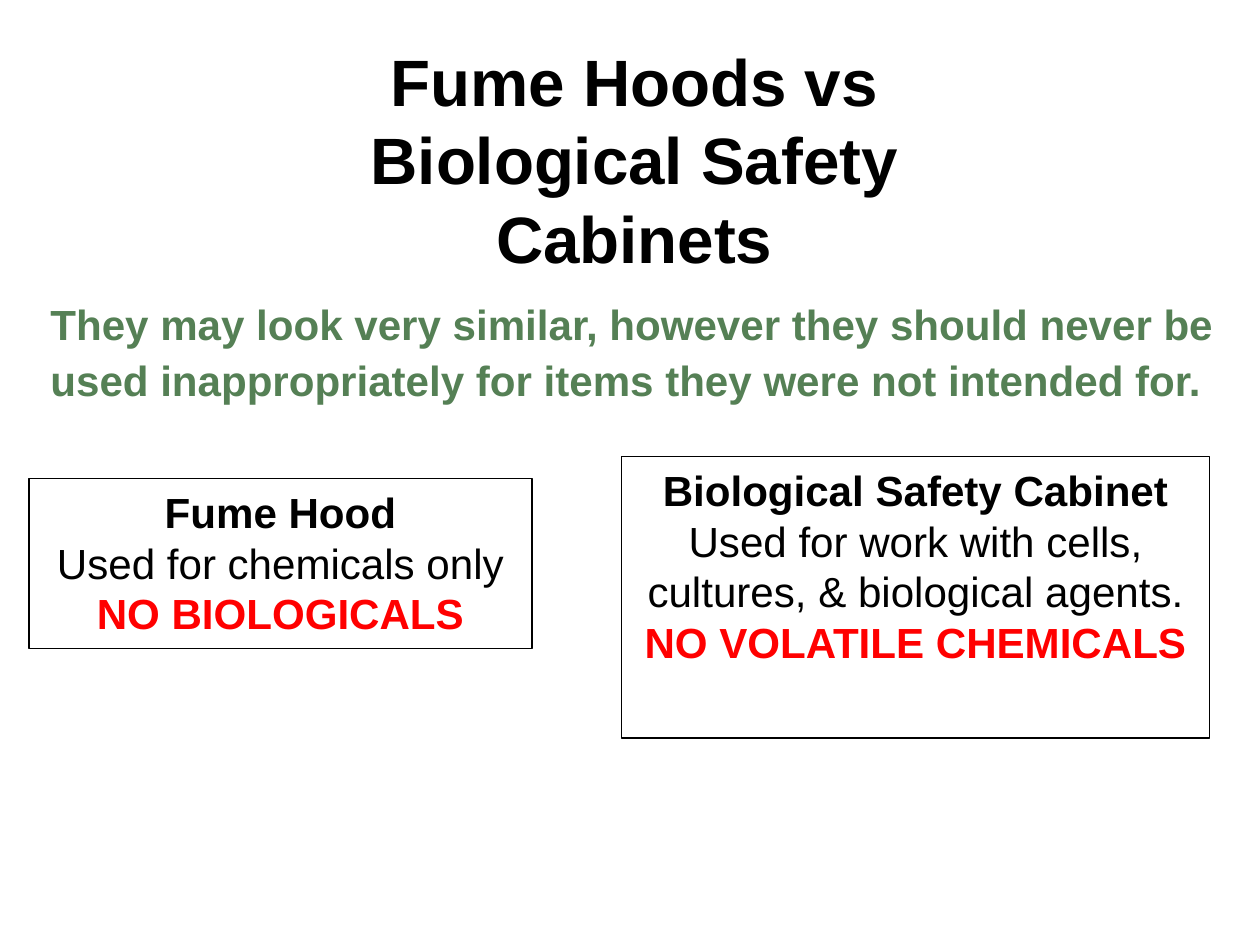
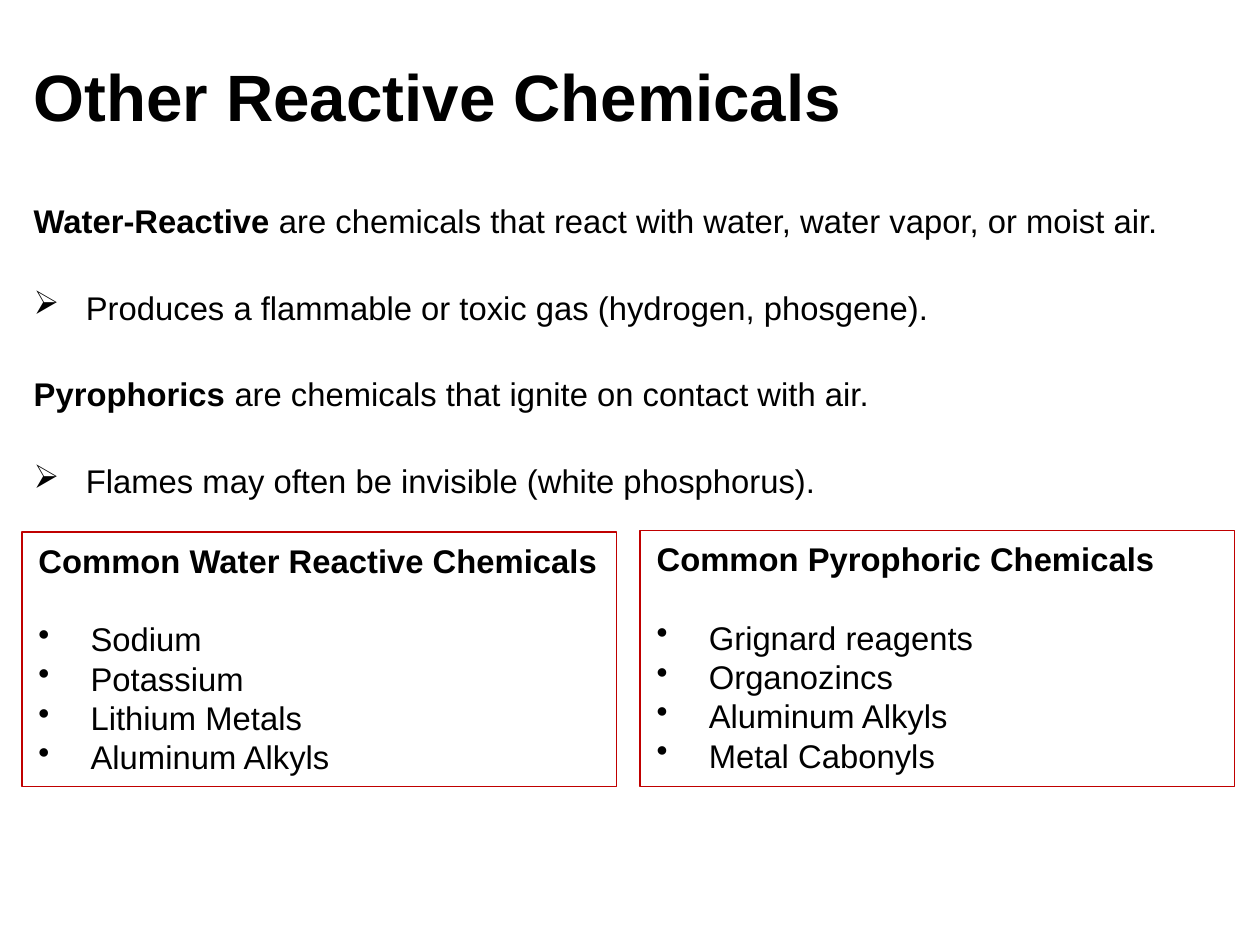
"""Builds two laboratory safety slides on fume hoods and reactive chemicals."""
import pptx
import pptx.dml.color
import pptx.enum.shapes
import pptx.enum.text
import pptx.oxml.ns
import pptx.util
from lxml import etree

PX = 9144
ALIGN = pptx.enum.text.PP_ALIGN
ANCHOR = pptx.enum.text.MSO_ANCHOR


def px(length):
    return pptx.util.Emu(length * PX)


def color(code):
    return pptx.dml.color.RGBColor.from_string(code)


class Deck:
    FONT = "Arial"
    BLACK, RED, GREEN, CRIMSON = "000000", "FF0000", "558055", "C00000"
    TITLE, LARGE, SMALL = 28, 18, 14
    SINGLE, LOOSE = 1.2, 1.32
    INDENT = 31

    def __init__(self, width, height):
        self.show = pptx.Presentation()
        self.show.slide_width, self.show.slide_height = px(width), px(height)
        self.slide = None

    def new_slide(self):
        self.slide = self.show.slides.add_slide(self.show.slide_layouts[6])

    def prepare(self, frame, insets, anchor=ANCHOR.TOP):
        frame.word_wrap = True
        frame.vertical_anchor = anchor
        frame.margin_left, frame.margin_top, frame.margin_right, frame.margin_bottom = map(px, insets)

    def add_lines(self, frame, lines, size, spacing=SINGLE, align=ALIGN.LEFT, gaps=()):
        pitch = pptx.util.Pt(round(size * spacing, 1))
        for index, (bullet, runs) in enumerate(lines):
            paragraph = frame.paragraphs[0] if index == 0 else frame.add_paragraph()
            paragraph.alignment = align
            paragraph.line_spacing = pitch
            paragraph.space_before = pitch if index in gaps else pptx.util.Pt(0)
            if bullet:
                props = paragraph._p.get_or_add_pPr()
                props.set("marL", str(px(self.INDENT)))
                props.set("indent", str(-px(self.INDENT)))
                mark = etree.SubElement(props, pptx.oxml.ns.qn("a:buChar"))
                mark.set("char", bullet)
            for text, bold, shade in runs:
                run = paragraph.add_run()
                run.text = text
                run.font.name = self.FONT
                run.font.size = pptx.util.Pt(size)
                run.font.bold = bold
                run.font.color.rgb = color(shade)

    def title(self, place, text, align=ALIGN.LEFT):
        frame = self.slide.shapes.add_textbox(*map(px, place)).text_frame
        self.prepare(frame, (0, 0, 0, 5), ANCHOR.BOTTOM)
        self.add_lines(frame, [("", [(text, True, self.BLACK)])], self.TITLE, align=align)

    def body(self, place, lines, size, gaps=()):
        frame = self.slide.shapes.add_textbox(*map(px, place)).text_frame
        self.prepare(frame, (0, 5, 0, 5))
        self.add_lines(frame, lines, size, self.LOOSE, gaps=gaps)

    def panel(self, place, lines, size, border, align=ALIGN.LEFT, gaps=()):
        rectangle = pptx.enum.shapes.MSO_SHAPE.RECTANGLE
        shape = self.slide.shapes.add_shape(rectangle, *map(px, place))
        shape.shadow.inherit = False
        shape.fill.background()
        shape.line.color.rgb = color(border)
        shape.line.width = pptx.util.Pt(0.75)
        self.prepare(shape.text_frame, (10, 5, 10, 5))
        self.add_lines(shape.text_frame, lines, size, align=align, gaps=gaps)

    def usage_panel(self, place, heading, uses, warning):
        lines = [("", [(heading, True, self.BLACK)])]
        lines += [("", [(use, False, self.BLACK)]) for use in uses]
        lines.append(("", [(warning, True, self.RED)]))
        self.panel(place, lines, self.LARGE, self.BLACK, ALIGN.CENTER)

    def examples_panel(self, place, heading, examples):
        lines = [("", [(heading, True, self.BLACK)])]
        lines += [("•", [(example, False, self.BLACK)]) for example in examples]
        self.panel(place, lines, self.SMALL, self.CRIMSON, gaps=(1,))

    def definitions(self, place, entries):
        lines = []
        for term, meaning, effect in entries:
            lines.append(("", [(term, True, self.BLACK), (meaning, False, self.BLACK)]))
            lines.append(("➢", [(effect, False, self.BLACK)]))
        self.body(place, lines, self.SMALL, range(1, len(lines)))


def main():
    deck = Deck(748, 561)

    deck.new_slide()
    deck.title((156, 27, 441, 142), "Fume Hoods vs Biological Safety Cabinets", ALIGN.CENTER)
    advice = ("They may look very similar, however they should never be used "
              "inappropriately for items they were not intended for.")
    deck.body((30, 169, 693, 89), [("", [(advice, True, deck.GREEN)])], deck.LARGE)
    deck.usage_panel((17, 284, 299, 101), "Fume Hood",
                     ["Used for chemicals only"], "NO BIOLOGICALS")
    deck.usage_panel((369, 271, 349, 167), "Biological Safety Cabinet",
                     ["Used for work with cells,", "cultures, & biological agents."],
                     "NO VOLATILE CHEMICALS")

    deck.new_slide()
    deck.title((20, 32, 629, 53), "Other Reactive Chemicals")
    deck.definitions((20, 112, 705, 200), [
        ("Water-Reactive ", "are chemicals that react with water, water vapor, or moist air.",
         "Produces a flammable or toxic gas (hydrogen, phosgene)."),
        ("Pyrophorics ", "are chemicals that ignite on contact with air.",
         "Flames may often be invisible (white phosphorus)."),
    ])
    deck.examples_panel((13, 316, 353, 151), "Common Water Reactive Chemicals",
                        ["Sodium", "Potassium", "Lithium Metals", "Aluminum Alkyls"])
    deck.examples_panel((380, 315, 353, 152), "Common Pyrophoric Chemicals",
                        ["Grignard reagents", "Organozincs", "Aluminum Alkyls", "Metal Cabonyls"])

    deck.show.save("out.pptx")


if __name__ == "__main__":
    main()
